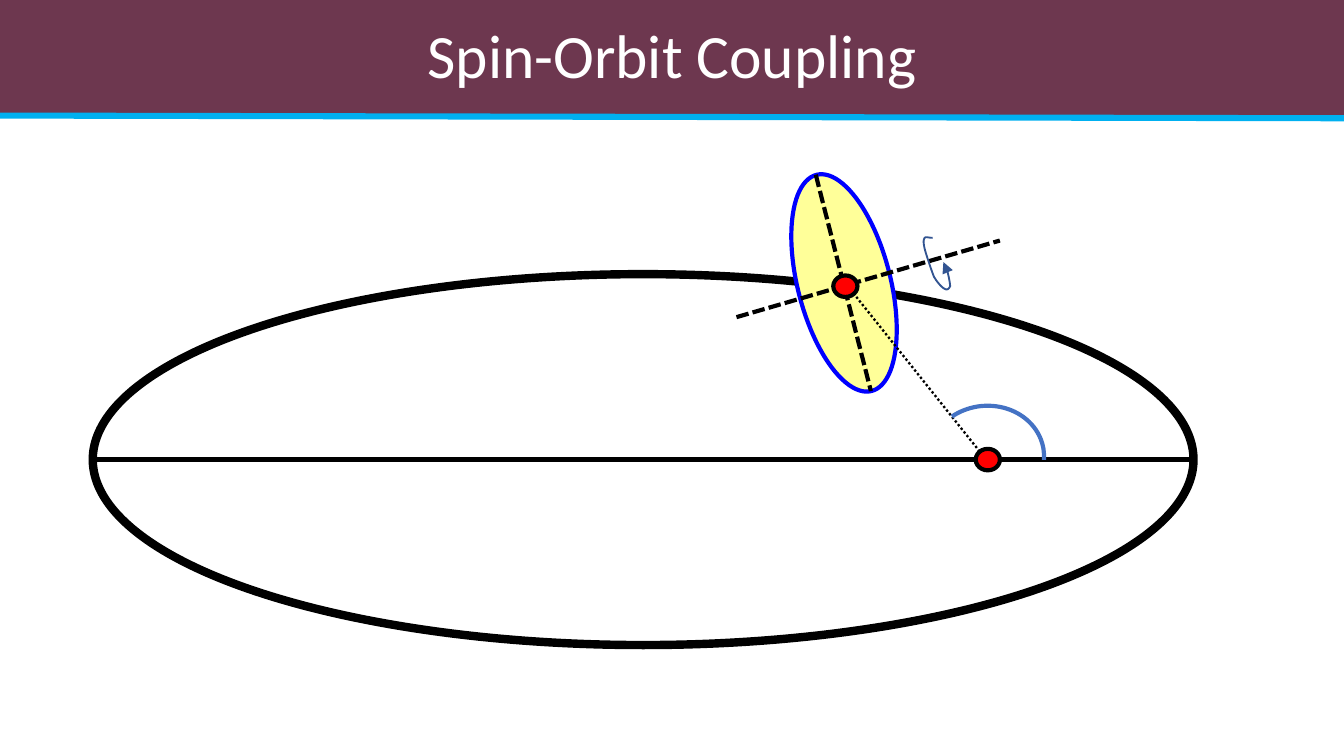
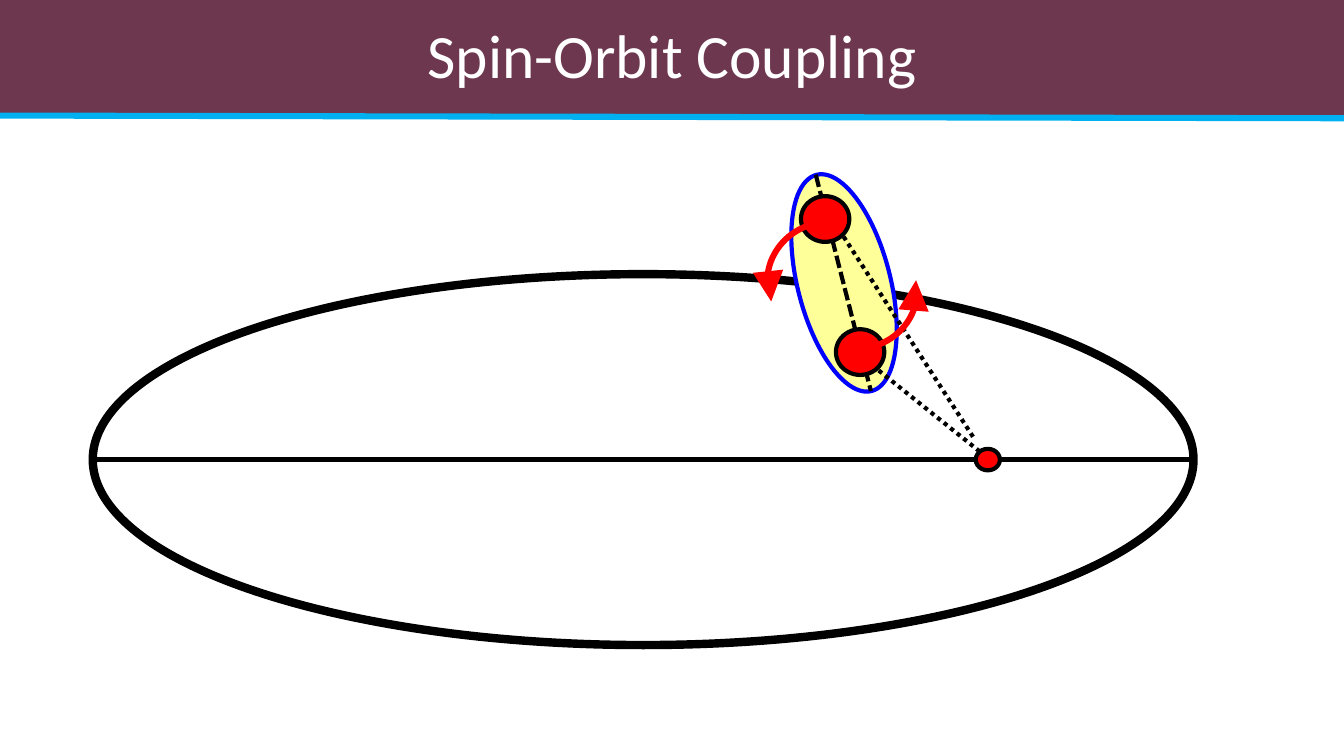
from lxml import etree
from pptx import Presentation
from pptx import util as u
from pptx.dml.color import RGBColor
from pptx.enum import dml, shapes, text
from pptx.oxml.ns import qn

BLACK, RED, BLUE, YELLOW = "000000", "FF0000", "0000FF", "FFFF99"
BAND, RULE, ANGLE, SPIN = "460220", "00B0F0", "4472C4", "325491"
DASH, DOT = dml.MSO_LINE.SQUARE_DOT, dml.MSO_LINE.ROUND_DOT
OVAL, ARC, BOX = (shapes.MSO_SHAPE.OVAL, shapes.MSO_SHAPE.ARC,
                  shapes.MSO_SHAPE.RECTANGLE)
FOCUS = (7.35, 3.42)
SMALL, LARGE = (0.18, 0.16), (0.36, 0.34)
SPIN_LOOP = [
    (6.94, 1.77), (6.91, 1.77), (6.89, 1.76), (6.88, 1.77),
    (6.87, 1.79), (6.87, 1.80), (6.88, 1.85),
    (6.89, 1.89), (6.93, 2.01), (6.95, 2.06),
    (6.98, 2.11), (7.01, 2.14), (7.03, 2.15),
    (7.05, 2.16), (7.06, 2.15), (7.07, 2.13),
    (7.07, 2.11), (7.06, 2.06), (7.05, 2.02),
    (7.04, 1.99), (7.03, 1.97), (7.02, 1.95),
]


def color(value):
    return RGBColor.from_string(value)


def inches(values):
    return [u.Inches(value) for value in values]


def bezier_points(controls, steps=6):
    for first in range(0, len(controls) - 1, 3):
        curve = controls[first:first + 4]
        for step in range(1, steps + 1):
            t = step / steps
            weights = ((1 - t) ** 3, 3 * t * (1 - t) ** 2,
                       3 * t * t * (1 - t), t ** 3)
            yield tuple(sum(weight * point[axis]
                            for weight, point in zip(weights, curve))
                        for axis in (0, 1))


class Diagram:
    font = "Calibri"
    title_size = 33

    def __init__(self):
        self.deck = Presentation()
        self.deck.slide_width = u.Inches(10)
        self.deck.slide_height = u.Inches(5.625)
        self.layout = self.deck.slide_layouts[5]
        self.page = None

    def start(self, title):
        first = self.page is None
        self.page = self.deck.slides.add_slide(self.layout)
        if first:
            self.decorate_layout()
        box = self.page.shapes.title
        box.left, box.top, box.width, box.height = inches((0, 0.03, 10, 0.81))
        frame = box.text_frame
        frame.text = title
        frame.word_wrap = True
        frame.vertical_anchor = text.MSO_ANCHOR.MIDDLE
        para = frame.paragraphs[0]
        para.alignment = text.PP_ALIGN.CENTER
        para.line_spacing = 0.9
        for span in para.runs:
            span.font.name = self.font
            span.font.size = u.Pt(self.title_size)
            span.font.color.rgb = color("FFFFFF")

    def decorate_layout(self):
        band = self.shape(BOX, (-0.01, 0, 10.01, 0.86), fill=BAND)
        tint = band.element.spPr.find(qn("a:solidFill"))[0]
        etree.SubElement(tint, qn("a:alpha"), val="79000")
        rule = self.line((0, 0.86), (10.01, 0.88), 3.25, RULE)
        tree = self.layout.shapes.element
        for position, item in enumerate((band, rule), start=2):
            tree.insert(position, item.element)

    def outline(self, item, stroke, width, dash=None):
        if stroke is None:
            item.line.fill.background()
            return
        item.line.color.rgb = color(stroke)
        item.line.width = u.Pt(width)
        if dash is not None:
            item.line.dash_style = dash

    def arrow(self, item, end, size="med"):
        line = item.element.spPr.find(qn("a:ln"))
        etree.SubElement(line, qn(f"a:{end}"), type="triangle", w=size, len=size)

    def shape(self, kind, area, fill=None, stroke=None, width=2.25, rotation=0):
        item = self.page.shapes.add_shape(kind, *inches(area))
        item.shadow.inherit = False
        item.rotation = rotation
        if fill:
            item.fill.solid()
            item.fill.fore_color.rgb = color(fill)
        else:
            item.fill.background()
        self.outline(item, stroke, width)
        return item

    def dot(self, center, size):
        corner = [middle - length / 2 for middle, length in zip(center, size)]
        return self.shape(OVAL, (*corner, *size), RED, BLACK)

    def line(self, start, end, width=2.25, stroke=BLACK, dash=None):
        item = self.page.shapes.add_connector(
            shapes.MSO_CONNECTOR.STRAIGHT, *inches(start + end))
        self.outline(item, stroke, width, dash)
        etree.SubElement(item.element.spPr, qn("a:effectLst"))
        return item

    def curve(self, controls, stroke, width):
        builder = self.page.shapes.build_freeform(*inches(controls[0]))
        builder.add_line_segments(
            [inches(point) for point in bezier_points(controls)], close=False)
        item = builder.convert_to_shape()
        item.shadow.inherit = False
        item.fill.background()
        self.outline(item, stroke, width)
        return item

    def orbit(self):
        self.shape(OVAL, (0.69, 2.04, 8.19, 2.76), stroke=BLACK, width=4.5)
        self.shape(OVAL, (5.45, 1.76, 1.66, 0.69), YELLOW, BLUE, rotation=255.7)
        self.line((8.88, 3.42), (0.69, 3.42))
        self.line((6.07, 1.3), (6.48, 2.91), dash=DASH)

    def spin_slide(self):
        self.start("Spin-Orbit Coupling")
        self.orbit()
        self.line((7.29, 3.36), (6.3, 2.12), 1.25, dash=DOT)
        angle = self.shape(ARC, (6.9, 3.02, 0.87, 0.78), stroke=ANGLE,
                           rotation=350.9)
        angle.adjustments[0] = 144.05
        angle.adjustments[1] = 6.36
        self.dot(FOCUS, SMALL)
        self.line((5.48, 2.36), (7.44, 1.79), dash=DASH)
        self.dot((6.29, 2.13), SMALL)
        self.arrow(self.curve(SPIN_LOOP, SPIN, 1), "tailEnd")

    def torque_slide(self):
        self.start("Spin-Orbit Coupling")
        self.orbit()
        self.line((7.24, 3.25), (6.27, 1.75), dash=DOT)
        self.dot(FOCUS, SMALL)
        self.dot((6.14, 1.63), LARGE)
        self.line((7.29, 3.36), (6.43, 2.67), dash=DOT)
        self.dot((6.4, 2.62), LARGE)
        turns = []
        for left, top, rotation in ((5.73, 1.63, 247.8), (5.96, 1.73, 78.4)):
            turn = self.shape(ARC, (left, top, 0.84, 0.89), stroke=RED,
                              width=3.25, rotation=rotation)
            self.arrow(turn, "headEnd", "lg")
            turns.append(turn)
        self.page.shapes.add_group_shape(turns)


def main():
    diagram = Diagram()
    diagram.spin_slide()
    diagram.torque_slide()
    diagram.deck.save("out.pptx")


if __name__ == "__main__":
    main()
